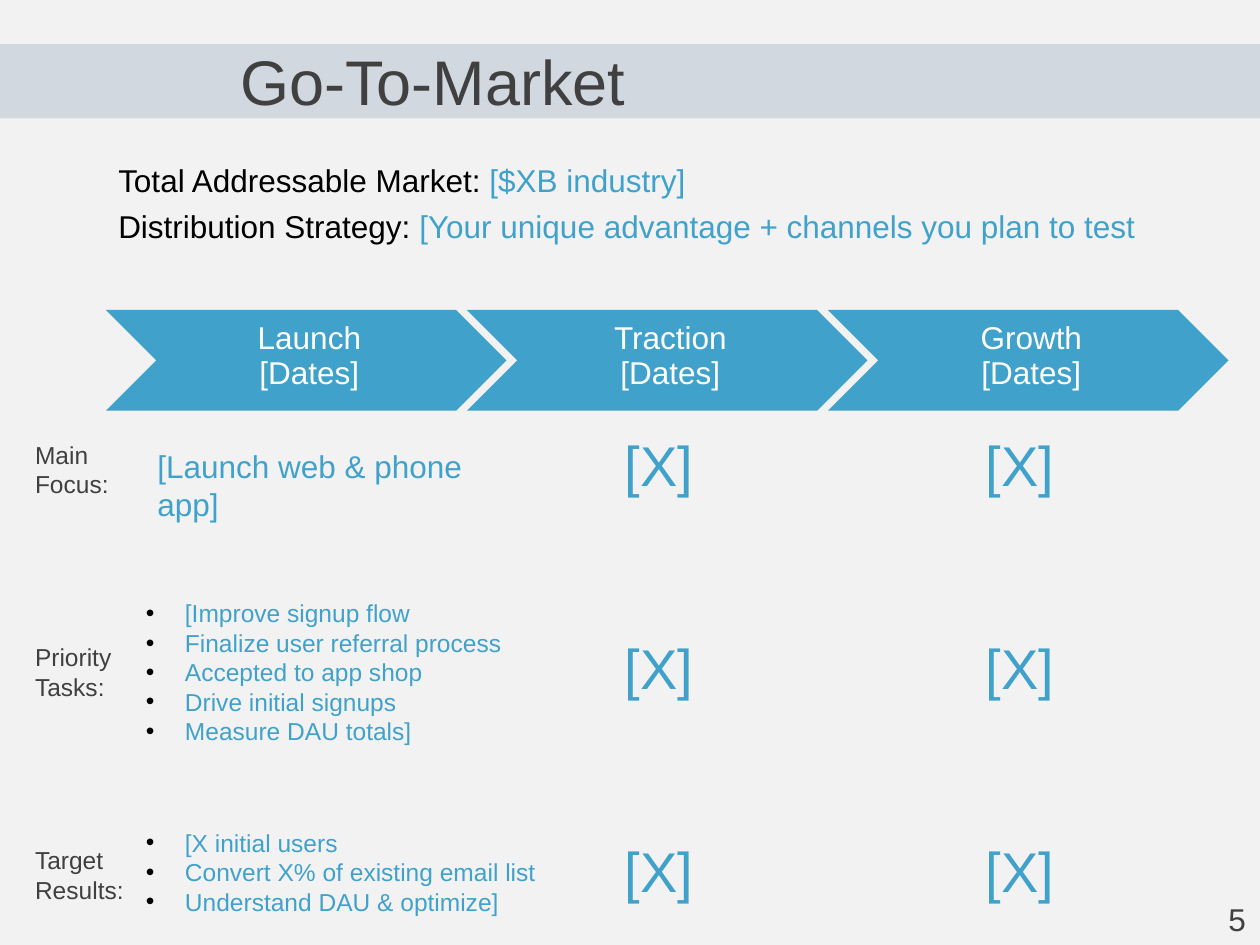
from lxml import etree
from pptx import Presentation, util as u
from pptx.dml import color as clr
from pptx.enum import shapes, text
from pptx.oxml import ns

HUES = {"back": "F2F2F2", "band": "1F497D", "blue": "40A2CB",
        "gray": "404040", "black": "000000", "white": "FFFFFF"}
In = u.Inches


def rgb(hue):
    return clr.RGBColor.from_string(HUES[hue])


def write(box, lines, size, form=None, bullet=False, wrap=True, edge=None):
    """Add a text box; lines hold lists of (words, hue) runs."""
    frame = page.shapes.add_textbox(*map(In, box)).text_frame
    frame.word_wrap = wrap
    for key, val in (edge or {}).items():
        setattr(frame, key, val)
    for n, runs in enumerate(lines):
        para = frame.add_paragraph() if n else frame.paragraphs[0]
        if bullet:
            props = para._p.get_or_add_pPr()
            props.set("marL", str(In(0.31)))
            props.set("indent", str(-In(0.31)))
            tint = etree.SubElement(props, ns.qn("a:buClr"))
            etree.SubElement(tint, ns.qn("a:srgbClr"), val=HUES["black"])
            etree.SubElement(props, ns.qn("a:buFont"), typeface="Arial")
            etree.SubElement(props, ns.qn("a:buChar"), char="•")
        for key, val in (form or {}).items():
            if n or key != "space_before":
                setattr(para, key, val)
        for words, hue in runs:
            run = para.add_run()
            run.text = words
            for key, val in {"name": "Arial", "size": u.Pt(size)}.items():
                setattr(run.font, key, val)
            run.font.color.rgb = rgb(hue)


deck = Presentation()
deck.slide_width, deck.slide_height = In(10), In(7.5)
page = deck.slides.add_slide(deck.slide_layouts[6])
page.background.fill.solid()
page.background.fill.fore_color.rgb = rgb("back")

# Title on a pale band
band = page.shapes.add_shape(shapes.MSO_SHAPE.RECTANGLE,
                             In(0), In(0.35), In(10), In(0.59))
band.shadow.inherit = False
band.fill.solid()
band.fill.fore_color.rgb = rgb("band")
band.line.fill.background()
tone = band.fill._xPr.find(".//" + ns.qn("a:srgbClr"))
etree.SubElement(tone, ns.qn("a:alpha"), val="15000")
write((1.81, 0.35, 6.7, 0.59), [[("Go-To-Market", "gray")]], 36,
      {"line_spacing": 0.8}, edge={"margin_top": In(0.1)})

# Market summary
write((0.84, 1.23, 8.68, 2.25), [
    [("Total Addressable Market: ", "black"), ("[$XB industry]", "blue")],
    [("Distribution Strategy: ", "black"),
     ("[Your unique advantage + channels you plan to test", "blue")],
], 18, {"space_before": u.Pt(4.4)})

# Phase chevrons
STEP = 2.865
TIGHT = {"line_spacing": 0.6, "space_after": u.Pt(7),
         "alignment": text.PP_ALIGN.CENTER}
INSET = {"vertical_anchor": text.MSO_ANCHOR.MIDDLE, "margin_left": In(0.08),
         "margin_right": In(0.03), "margin_top": In(0.03),
         "margin_bottom": In(0.03)}
for col, phase in enumerate(["Launch", "Traction", "Growth"]):
    left = 0.84 + col * STEP
    arrow = page.shapes.add_shape(shapes.MSO_SHAPE.CHEVRON,
                                  In(left), In(2.46), In(3.18), In(0.8))
    arrow.shadow.inherit = False
    arrow.fill.solid()
    arrow.fill.fore_color.rgb = rgb("blue")
    arrow.line.fill.background()
    write((left + 0.4, 2.46, 2.38, 0.8),
          [[(phase, "white")], [("[Dates]", "white")]], 18, TIGHT, edge=INSET)

# Row labels and open cells
ROWS = [("Main Focus:", 1.14), ("Priority Tasks:", 1.37),
        ("Target Results:", 1.37)]
for row, (label, wide) in enumerate(ROWS):
    top = 3.37 + row * 1.61
    write((0.18, top + 0.07, wide, 0.57), [[(label, "gray")]], 14)
    for col in range(2):
        write((4.86 + col * STEP, top, 0.78, 0.64), [[("[X]", "blue")]], 32,
              wrap=False)

# Launch column
write((1.15, 3.5, 2.99, 0.4), [[("[Launch web & phone app]", "blue")]], 18,
      wrap=False)
LISTS = [
    ((1.06, 4.7, 3.06, 1.28),
     ["[Improve signup flow", "Finalize user referral process",
      "Accepted to app shop", "Drive initial signups",
      "Measure DAU totals]"]),
    ((1.06, 6.52, 3.33, 0.81),
     ["[X initial users", "Convert X% of existing email list",
      "Understand DAU & optimize]"]),
]
for box, items in LISTS:
    write(box, [[(item, "blue")] for item in items], 14, bullet=True,
          wrap=False)

# Page number
write((9.65, 7.09, 0.34, 0.4), [[("5", "gray")]], 18, wrap=False)

deck.save("out.pptx")
